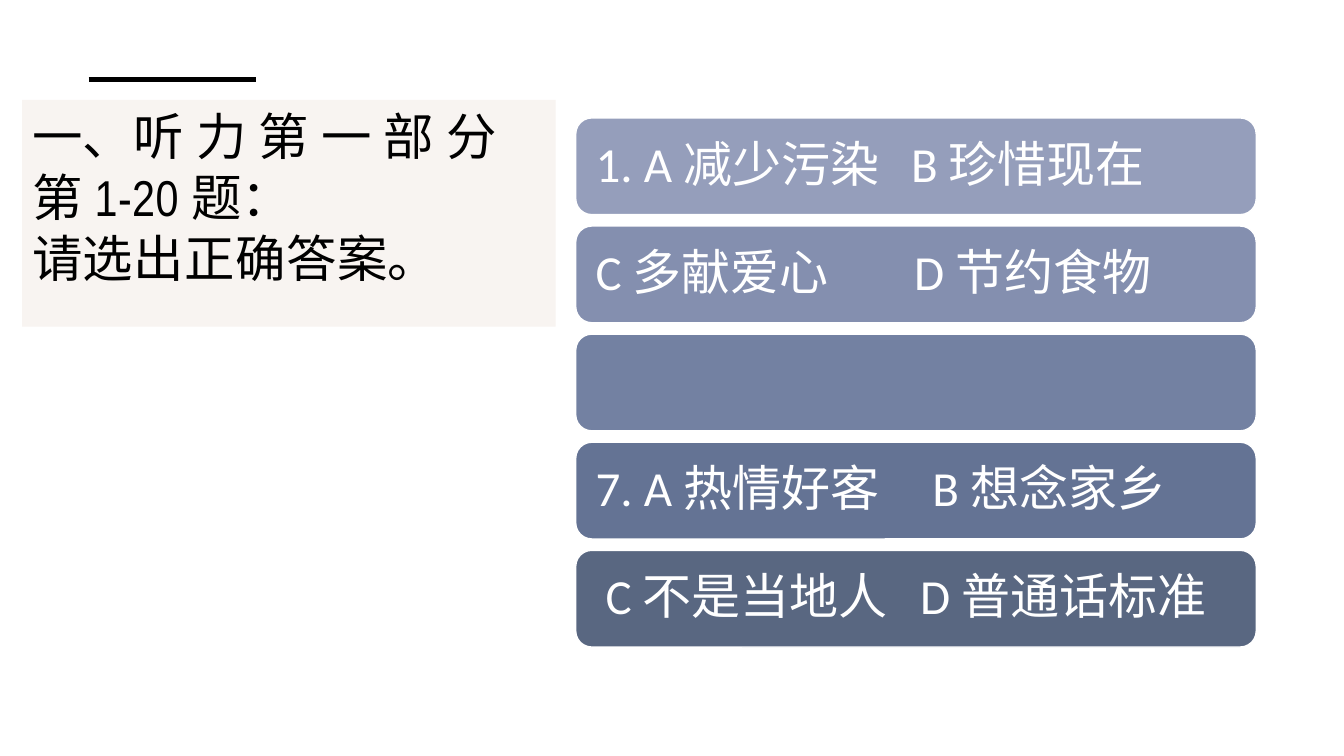
from lxml import etree
from pptx import Presentation
from pptx.dml.color import RGBColor
from pptx.enum.shapes import MSO_CONNECTOR, MSO_SHAPE
from pptx.enum.text import MSO_ANCHOR, PP_ALIGN
from pptx.oxml.ns import qn
from pptx.util import Inches, Pt

BLACK = RGBColor(0x00, 0x00, 0x00)
WHITE = RGBColor(0xFF, 0xFF, 0xFF)
CREAM = RGBColor(0xF8, 0xF4, 0xF1)

HEADING = "一、听 力 第 一 部 分\v第 1-20 题：\v请选出正确答案。"

# Fill, text, left margin and position of the second option (inches)
ANSWER_ROWS = [
    (RGBColor(0x95, 0x9E, 0xBB), "1. A 减少污染\tB 珍惜现在", 0.2, 3.13),
    (RGBColor(0x84, 0x8F, 0xAF), "C 多献爱心\tD 节约食物", 0.2, 3.16),
    (RGBColor(0x73, 0x81, 0xA2), "", 0.2, 0),
    (RGBColor(0x64, 0x73, 0x94), "7. A 热情好客\tB 想念家乡", 0.2, 3.34),
    (RGBColor(0x59, 0x67, 0x81), "C 不是当地人\tD 普通话标准", 0.3, 3.12),
]
ROW_HEIGHT = 0.96


def format_runs(paragraph, font_name, size, color):
    for run in paragraph.runs:
        run.font.name = font_name
        run.font.size = Pt(size)
        run.font.color.rgb = color


def add_tab_stop(paragraph, position):
    properties = paragraph._p.get_or_add_pPr()
    tab_list = etree.SubElement(properties, qn("a:tabLst"))
    etree.SubElement(tab_list, qn("a:tab"), pos=str(Inches(position)), algn="l")


def add_heading(slide, left, top, width, height):
    """Add the cream heading panel with its accent rule above."""
    panel = slide.shapes.add_textbox(
        Inches(left), Inches(top), Inches(width), Inches(height))
    panel.fill.solid()
    panel.fill.fore_color.rgb = CREAM
    text_frame = panel.text_frame
    text_frame.word_wrap = True
    paragraph = text_frame.paragraphs[0]
    paragraph.text = HEADING
    paragraph.line_spacing = Pt(43.5)
    format_runs(paragraph, "Arial Narrow", 36, BLACK)
    for run in paragraph.runs:
        run.font._element.set("spc", "30")

    rule_left, rule_top = Inches(left + 0.66), Inches(top - 0.2)
    rule = slide.shapes.add_connector(
        MSO_CONNECTOR.STRAIGHT,
        rule_left, rule_top, rule_left + Inches(1.66), rule_top)
    rule.line.color.rgb = BLACK
    rule.line.width = Pt(3.5)
    etree.SubElement(rule._element.spPr, qn("a:effectLst"))


def add_answer_row(slide, left, top, width, fill, text, margin, tab_position):
    row = slide.shapes.add_shape(
        MSO_SHAPE.ROUNDED_RECTANGLE,
        Inches(left), Inches(top), Inches(width), Inches(ROW_HEIGHT))
    row.shadow.inherit = False
    row.fill.solid()
    row.fill.fore_color.rgb = fill
    row.line.color.rgb = WHITE
    row.line.width = Pt(1)
    if not text:
        return
    text_frame = row.text_frame
    text_frame.word_wrap = True
    text_frame.vertical_anchor = MSO_ANCHOR.MIDDLE
    # The rounded corners already inset the text by about 0.05 inch
    text_frame.margin_left = Inches(margin - 0.05)
    text_frame.margin_right = Inches(0.05)
    paragraph = text_frame.paragraphs[0]
    paragraph.text = text
    paragraph.alignment = PP_ALIGN.LEFT
    paragraph.line_spacing = 0.9
    add_tab_stop(paragraph, tab_position)
    format_runs(paragraph, "Calibri", 35, WHITE)


def add_answers(slide, left, top, width, height):
    """Stack the answer rows evenly from the top to the bottom of the box."""
    pitch = (height - ROW_HEIGHT) / (len(ANSWER_ROWS) - 1)
    for index, row in enumerate(ANSWER_ROWS):
        add_answer_row(slide, left, top + index * pitch, width, *row)


def main():
    presentation = Presentation()
    presentation.slide_width = Inches(13.33)
    presentation.slide_height = Inches(7.5)
    slide = presentation.slides.add_slide(presentation.slide_layouts[6])
    add_heading(slide, 0.22, 0.99, 5.29, 2.25)
    add_answers(slide, 5.71, 1.17, 6.75, 5.25)
    presentation.save("out.pptx")


if __name__ == "__main__":
    main()
